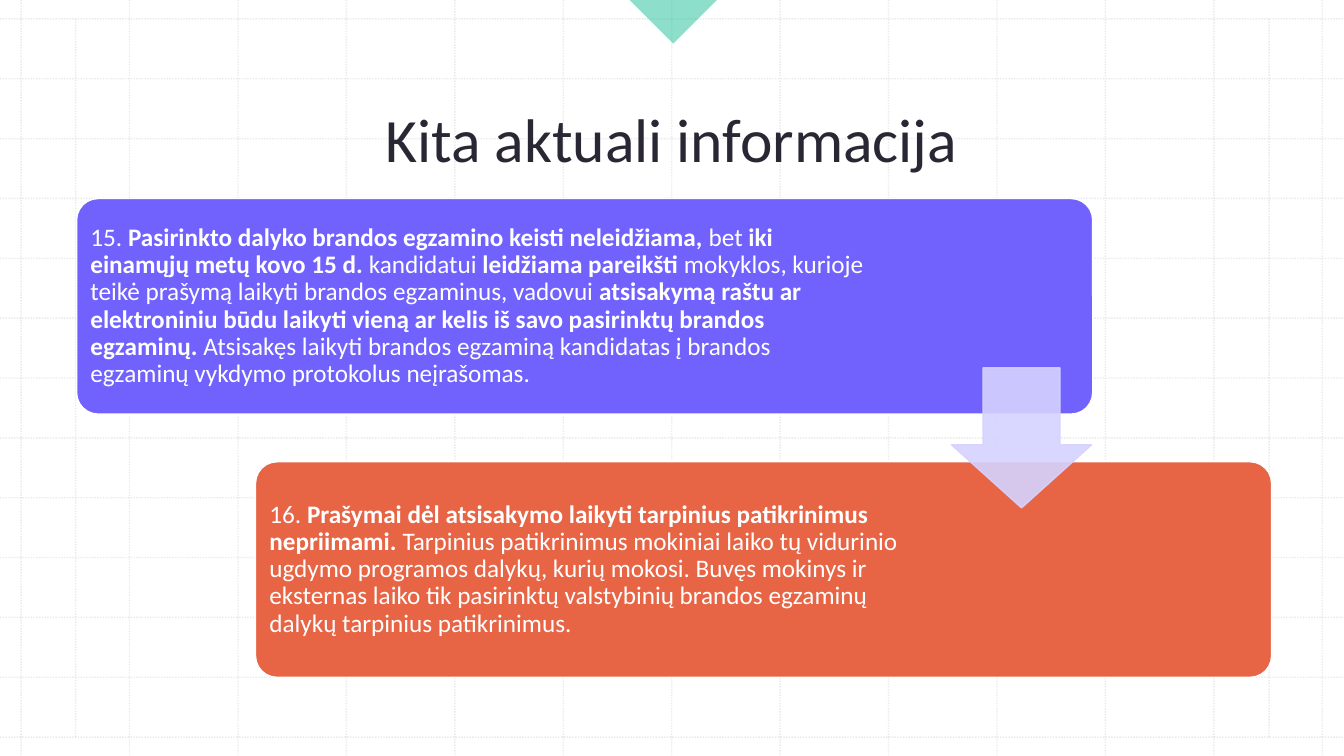
from lxml.etree import SubElement
from pptx import Presentation
from pptx.dml.color import RGBColor
from pptx.enum.dml import MSO_LINE as Dash
from pptx.enum.shapes import MSO_CONNECTOR as Link, MSO_SHAPE as Form
from pptx.enum.text import MSO_ANCHOR as Anchor, PP_ALIGN as Align
from pptx.oxml.ns import qn
from pptx.util import Pt

WIDE, HIGH = 960, 540


def color(text):
    return RGBColor.from_string(text)


class Board:
    font = "Calibri"
    white = "FFFFFF"
    dark = "2A2735"
    grid = "BCBCBC"
    mint = "1EBE9B"
    violet = "7162FE"
    coral = "E76445"
    lilac = "D5D3FF"

    def __init__(self, slide):
        self.slide = slide
        self.shapes = slide.shapes

    def paint(self, fill, tint, alpha=100):
        fill.solid()
        fill.fore_color.rgb = color(tint)
        if alpha < 100:
            node = fill._xPr.find(qn("a:solidFill"))[0]
            SubElement(node, qn("a:alpha")).set("val", str(alpha * 1000))

    def rule(self, x1, y1, x2, y2):
        link = self.shapes.add_connector(
            Link.STRAIGHT, Pt(x1), Pt(y1), Pt(x2), Pt(y2))
        link.line.width = Pt(1)
        self.paint(link.line.fill, self.grid, 30)
        link.line.dash_style = Dash.ROUND_DOT
        SubElement(link._element.spPr, qn("a:effectLst"))

    def shape(self, form, x, y, w, h, tint, alpha=100, edge=None, bends=(), turn=0):
        item = self.shapes.add_shape(form, Pt(x), Pt(y), Pt(w), Pt(h))
        item.shadow.inherit = False
        item.rotation = turn
        for i, bend in enumerate(bends):
            item.adjustments[i] = bend
        self.paint(item.fill, tint, alpha)
        if edge:
            item.line.width = Pt(1)
            self.paint(item.line.fill, edge, alpha)
        else:
            item.line.fill.background()

    def text(self, x, y, w, h, words, size, tint, anchor, align, pad, lead=1.0):
        frame = self.shapes.add_textbox(Pt(x), Pt(y), Pt(w), Pt(h)).text_frame
        frame.word_wrap = True
        frame.vertical_anchor = anchor
        frame.margin_left = frame.margin_right = Pt(pad)
        frame.margin_top = frame.margin_bottom = Pt(pad)
        para = frame.paragraphs[0]
        para.alignment = align
        para.line_spacing = lead
        for i, part in enumerate(words.split("*")):
            run = para.add_run()
            run.text = part
            run.font.name = self.font
            run.font.size = Pt(size)
            run.font.bold = i % 2 == 1
            run.font.color.rgb = color(tint)

    def card(self, x, y, span, tint, words):
        self.shape(Form.ROUNDED_RECTANGLE, x, y, 725.8, 154,
                   tint, edge=self.white, bends=[0.1])
        self.text(x + 4.5, y + 4.5, span, 145, words, 18, self.white,
                  Anchor.MIDDLE, Align.LEFT, 5.4, 0.9)


def main():
    deck = Presentation()
    deck.slide_width, deck.slide_height = Pt(WIDE), Pt(HIGH)
    board = Board(deck.slides.add_slide(deck.slide_layouts[6]))

    for i in range(13):
        x, y = 15.1 + i * 77.45, 13.5 + i * 42.75
        board.rule(x, 0, x, HIGH)
        board.rule(0, y, WIDE, y)
    for x in (54, 906.5):
        board.rule(x, 13.5, x, 526.5)

    board.shape(Form.RIGHT_TRIANGLE, 458.6, -22.7, 44.6, 44.6,
                board.mint, 50, turn=315)
    board.text(54.7, 56.9, 850.3, 71.3, "Kita aktuali informacija", 44,
               board.dark, Anchor.BOTTOM, Align.CENTER, 3.6)

    board.card(54.7, 141.8, 566.6, board.violet,
               "15. *Pasirinkto dalyko brandos egzamino keisti neleidžiama, *bet "
               "*iki einamųjų metų kovo 15 d. *kandidatui *leidžiama pareikšti "
               "*mokyklos, kurioje teikė prašymą laikyti brandos egzaminus, vadovui "
               "*atsisakymą raštu ar elektroniniu būdu laikyti vieną ar kelis iš "
               "savo pasirinktų brandos egzaminų. *Atsisakęs laikyti brandos "
               "egzaminą kandidatas į brandos egzaminų vykdymo protokolus "
               "neįrašomas.")
    board.card(182.5, 329.8, 488.2, board.coral,
               "16. *Prašymai dėl atsisakymo laikyti tarpinius patikrinimus "
               "nepriimami. *Tarpinius patikrinimus mokiniai laiko tų vidurinio "
               "ugdymo programos dalykų, kurių mokosi. Buvęs mokinys ir eksternas "
               "laiko tik pasirinktų valstybinių brandos egzaminų dalykų tarpinius "
               "patikrinimus.")
    board.shape(Form.DOWN_ARROW, 679.7, 262.8, 100, 100, board.lilac, 90,
                edge=board.lilac, bends=[0.55, 0.45])

    deck.save("out.pptx")


if __name__ == "__main__":
    main()
